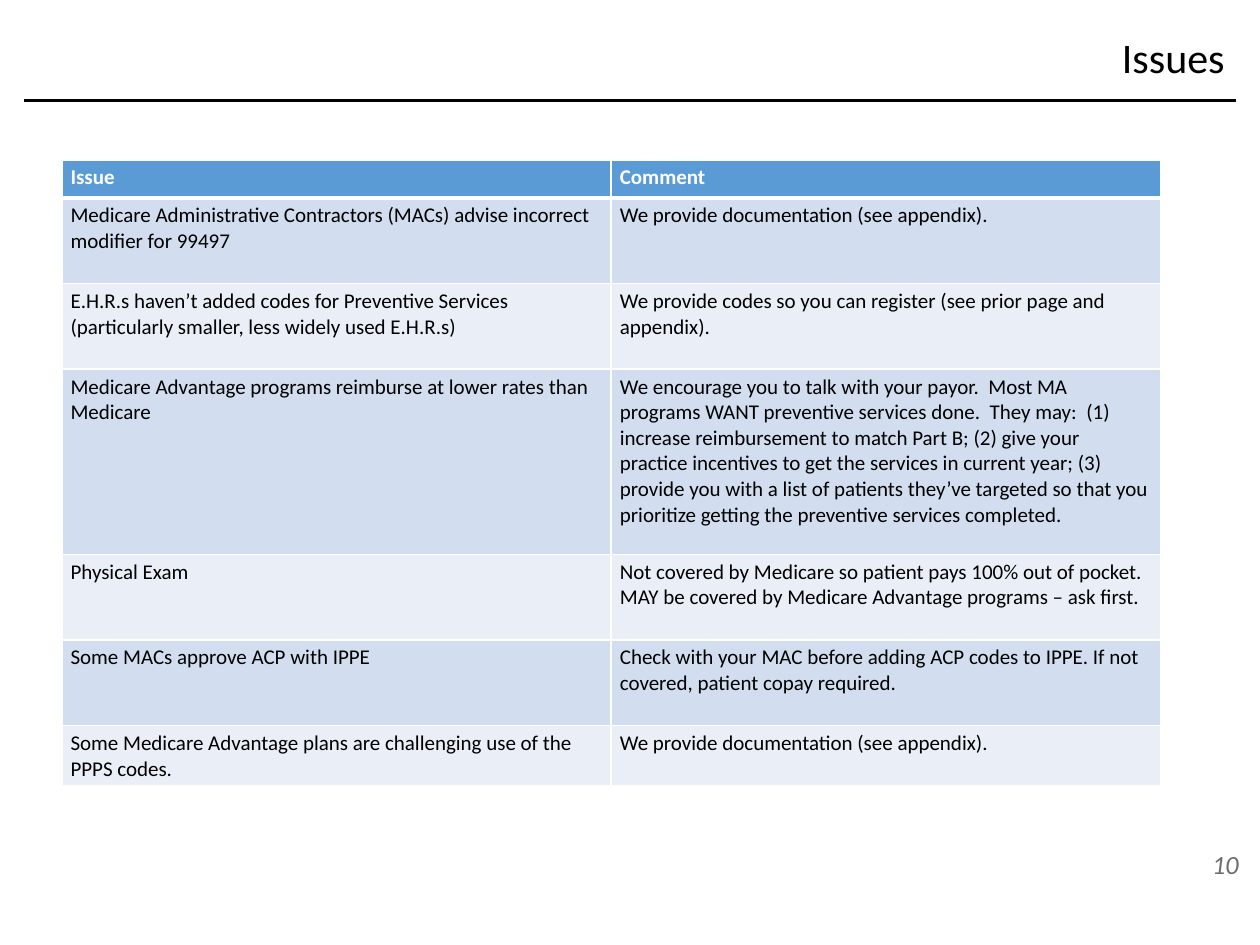
from lxml.etree import SubElement
from pptx import Presentation
from pptx.dml.color import RGBColor
from pptx.enum.shapes import MSO_CONNECTOR
from pptx.enum.text import MSO_ANCHOR, PP_ALIGN
from pptx.oxml.ns import qn
from pptx.util import Inches, Pt

COLORS = {
    "text": "000000",
    "header_text": "FFFFFF",
    "header": "5B9BD5",
    "odd_row": "D2DEEF",
    "even_row": "EAEFF7",
    "border": "FFFFFF",
    "page_number": "6D6D6C",
}
FONT = "Calibri"
COLUMN_WIDTH = 4.36
ROW_HEIGHTS = [0.3, 0.68, 0.68, 1.47, 0.68, 0.68, 0.47]
ROWS = [
    ("Issue", "Comment"),
    ("Medicare Administrative Contractors (MACs) advise incorrect modifier for 99497",
     "We provide documentation (see appendix)."),
    ("E.H.R.s haven’t added codes for Preventive Services (particularly smaller, "
     "less widely used E.H.R.s)",
     "We provide codes so you can register (see prior page and appendix)."),
    ("Medicare Advantage programs reimburse at lower rates than Medicare",
     "We encourage you to talk with your payor.  Most MA programs WANT preventive "
     "services done.  They may:  (1) increase reimbursement to match Part B; (2) give "
     "your practice incentives to get the services in current year; (3) provide you "
     "with a list of patients they’ve targeted so that you prioritize getting the "
     "preventive services completed."),
    ("Physical Exam",
     "Not covered by Medicare so patient pays 100% out of pocket.  MAY be covered by "
     "Medicare Advantage programs – ask first."),
    ("Some MACs approve ACP with IPPE",
     "Check with your MAC before adding ACP codes to IPPE. If not covered, patient "
     "copay required."),
    ("Some Medicare Advantage plans are challenging use of the PPPS codes.",
     "We provide documentation (see appendix)."),
]


def color(name):
    return RGBColor.from_string(COLORS[name])


def add_run(paragraph, text, size, color_name, bold=False, italic=False):
    run = paragraph.add_run()
    run.text = text
    font = run.font
    font.name, font.size = FONT, Pt(size)
    font.bold, font.italic = bold, italic
    font.color.rgb = color(color_name)


def place(shape, left, top, width, height):
    shape.left, shape.top = Inches(left), Inches(top)
    shape.width, shape.height = Inches(width), Inches(height)


def set_margins(target, horizontal=0.07, vertical=0.04):
    target.margin_left = target.margin_right = Inches(horizontal)
    target.margin_top = target.margin_bottom = Inches(vertical)


def add_title(slide, text):
    title = slide.shapes.title
    place(title, 1.2, 0.2, 8.62, 0.5)
    frame = title.text_frame
    frame.vertical_anchor = MSO_ANCHOR.MIDDLE
    paragraph = frame.paragraphs[0]
    paragraph.alignment = PP_ALIGN.RIGHT
    add_run(paragraph, text, 24, "text")


def add_title_rule(slide):
    rule = slide.shapes.add_connector(
        MSO_CONNECTOR.STRAIGHT, Inches(0.19), Inches(0.8), Inches(9.81), Inches(0.8))
    rule.line.color.rgb = color("text")
    rule.line.width = Pt(1.5)
    SubElement(rule._element.spPr, qn("a:effectLst"))


def set_borders(cell, bottom_width):
    """Draw all four cell borders; must run before the cell gets its fill."""
    properties = cell._tc.get_or_add_tcPr()
    for side, width in (("L", 1), ("R", 1), ("T", 1), ("B", bottom_width)):
        line = SubElement(properties, qn(f"a:ln{side}"), w=str(Pt(width)))
        fill = SubElement(line, qn("a:solidFill"))
        SubElement(fill, qn("a:srgbClr"), val=COLORS["border"])


def format_cell(cell, text, row_index):
    is_header = row_index == 0
    set_borders(cell, 3 if is_header else 1)
    set_margins(cell)
    cell.fill.solid()
    row_color = "odd_row" if row_index % 2 else "even_row"
    cell.fill.fore_color.rgb = color("header" if is_header else row_color)
    add_run(cell.text_frame.paragraphs[0], text, 12,
            "header_text" if is_header else "text", bold=is_header)


def add_issue_table(slide):
    table = slide.shapes.add_table(
        len(ROWS), 2, Inches(0.49), Inches(1.27),
        Inches(2 * COLUMN_WIDTH), Inches(sum(ROW_HEIGHTS))).table
    for column in table.columns:
        column.width = Inches(COLUMN_WIDTH)
    for row_index, (texts, height) in enumerate(zip(ROWS, ROW_HEIGHTS)):
        table.rows[row_index].height = Inches(height)
        for column_index, text in enumerate(texts):
            format_cell(table.cell(row_index, column_index), text, row_index)


def add_page_number(slide, number):
    box = slide.shapes.add_textbox(Inches(7.65), Inches(6.66), Inches(2.25), Inches(0.4))
    frame = box.text_frame
    frame.word_wrap = True
    frame.vertical_anchor = MSO_ANCHOR.MIDDLE
    set_margins(frame)
    paragraph = frame.paragraphs[0]
    paragraph.alignment = PP_ALIGN.RIGHT
    add_run(paragraph, number, 15, "page_number", italic=True)


def main():
    presentation = Presentation()
    presentation.slide_width, presentation.slide_height = Inches(10), Inches(7.5)
    slide = presentation.slides.add_slide(presentation.slide_layouts.get_by_name("Title Only"))
    add_page_number(slide, "10")
    add_title_rule(slide)
    add_title(slide, "Issues")
    add_issue_table(slide)
    presentation.save("out.pptx")


if __name__ == "__main__":
    main()
